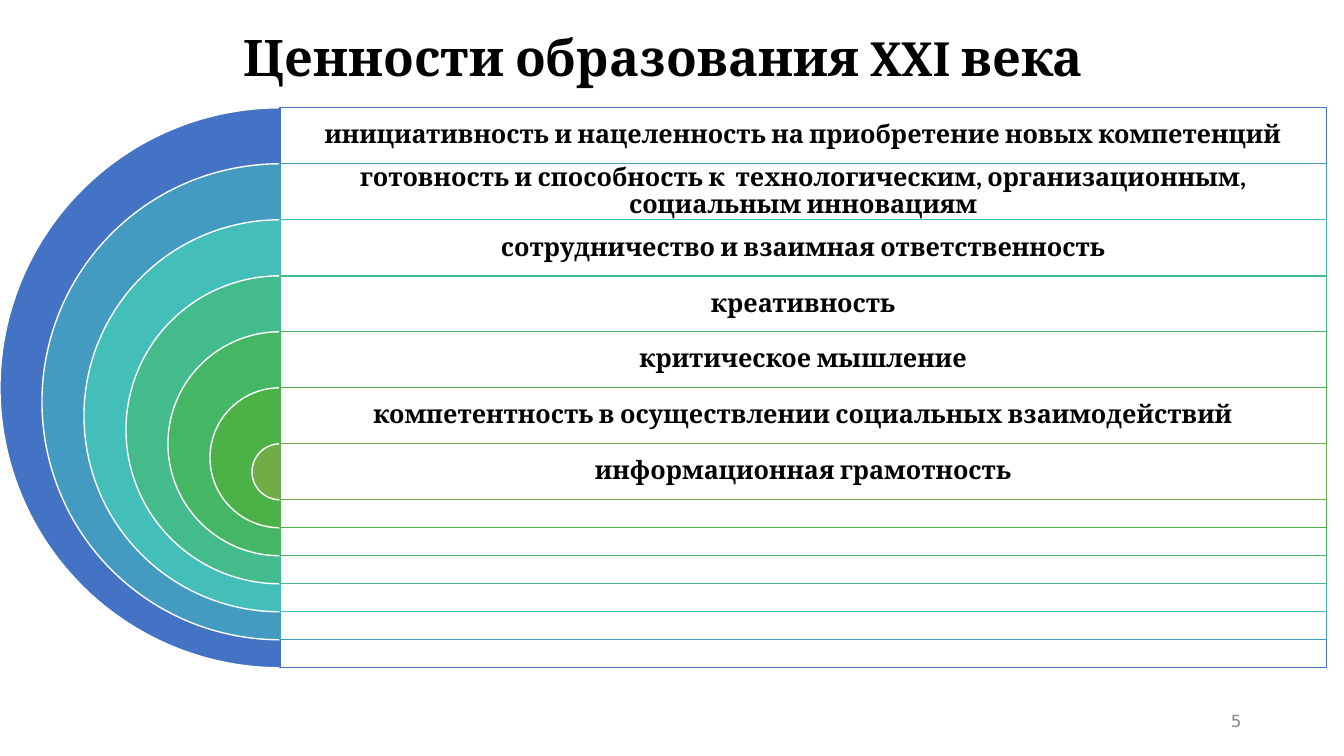
import pptx
import pptx.util
import pptx.dml.color
import pptx.enum.shapes
import pptx.enum.text
import pptx.oxml
import pptx.oxml.ns

Pt = pptx.util.Pt
RGBColor = pptx.dml.color.RGBColor
SHAPE = pptx.enum.shapes.MSO_SHAPE
ALIGN = pptx.enum.text.PP_ALIGN
ANCHOR = pptx.enum.text.MSO_ANCHOR

BLACK = RGBColor(0x00, 0x00, 0x00)
WHITE = RGBColor(0xFF, 0xFF, 0xFF)
GRAY = RGBColor(0x89, 0x89, 0x89)
BLUE = RGBColor(0x44, 0x72, 0xC4)
STEEL = RGBColor(0x44, 0x9B, 0xC1)
TEAL = RGBColor(0x43, 0xBE, 0xB9)
MINT = RGBColor(0x43, 0xBB, 0x8D)
EMERALD = RGBColor(0x45, 0xB6, 0x64)
GREEN = RGBColor(0x4C, 0xB1, 0x46)
OLIVE = RGBColor(0x70, 0xAD, 0x47)

VALUES = [
    ("инициативность и нацеленность на приобретение новых компетенций", BLUE),
    ("готовность и способность к  технологическим, организационным, "
     "социальным инновациям", STEEL),
    ("сотрудничество и взаимная ответственность", TEAL),
    ("креативность", MINT),
    ("критическое мышление", EMERALD),
    ("компетентность в осуществлении социальных взаимодействий", GREEN),
    ("информационная грамотность", OLIVE),
]


def write(sp, text, size, font="Cambria", color=BLACK, bold=True,
          align=ALIGN.CENTER, spacing=0.9, inset=None):
    tf = sp.text_frame
    tf.word_wrap = True
    tf.auto_size = pptx.enum.text.MSO_AUTO_SIZE.NONE
    tf.vertical_anchor = ANCHOR.MIDDLE
    if inset is not None:
        tf.margin_left = tf.margin_right = Pt(inset)
        tf.margin_top = tf.margin_bottom = Pt(inset)
    p = tf.paragraphs[0]
    p.alignment = align
    p.line_spacing = spacing
    r = p.add_run()
    r.text = text
    r.font.name = font
    r.font.size = Pt(size)
    r.font.bold = bold
    r.font.color.rgb = color


def add_figure(slide, kind, left, top, width, height, fill, line):
    sp = slide.shapes.add_shape(kind, Pt(left), Pt(top), Pt(width), Pt(height))
    sp.shadow.inherit = False
    sp.fill.solid()
    sp.fill.fore_color.rgb = fill
    sp.line.color.rgb = line
    sp.line.width = Pt(1)
    return sp


def set_opacity(sp, percent):
    color = sp.fill._xPr.find(".//" + pptx.oxml.ns.qn("a:srgbClr"))
    color.append(pptx.oxml.parse_xml(
        f'<a:alpha {pptx.oxml.ns.nsdecls("a")} val="{percent * 1000}"/>'))


def add_title(slide, left, top, width, height):
    sp = slide.shapes.title
    sp.left, sp.top, sp.width, sp.height = Pt(left), Pt(top), Pt(width), Pt(height)
    write(sp, "Ценности образования XXI века", 36)


def add_target(slide, left, top, width, size):
    """Nested half circles, each with a labelled panel on its right."""
    row = size / 10
    inset = row * 0.75
    center = left + size / 2
    panel_width = width - size / 2
    for i, (text, color) in enumerate(VALUES):
        y = top + i * row
        diameter = size - 2 * i * inset

        # Half circle
        pie = add_figure(slide, SHAPE.PIE, left + i * inset, y,
                         diameter, diameter, color, WHITE)
        pie.adjustments[0] = 54
        pie.adjustments[1] = 162

        # Panel
        panel = add_figure(slide, SHAPE.RECTANGLE, center, y,
                           panel_width, diameter, WHITE, color)
        set_opacity(panel, 90)

        # Label
        label = slide.shapes.add_textbox(Pt(center), Pt(y), Pt(panel_width), Pt(row))
        write(label, text, 18, inset=5)


def add_page_number(slide, left, top, width, height):
    sp = slide.shapes.add_textbox(Pt(left), Pt(top), Pt(width), Pt(height))
    write(sp, "5", 12, font="DejaVu Sans", color=GRAY, bold=False,
          align=ALIGN.RIGHT, spacing=1.0)


def main():
    prs = pptx.Presentation()
    prs.slide_width, prs.slide_height = Pt(960), Pt(540)
    slide = prs.slides.add_slide(prs.slide_layouts[5])
    add_title(slide, 60, 18, 828, 50)
    add_target(slide, 0, 77, 947.4, 400)
    add_page_number(slide, 678, 500.5, 216, 28.75)
    prs.save("out.pptx")


if __name__ == "__main__":
    main()
